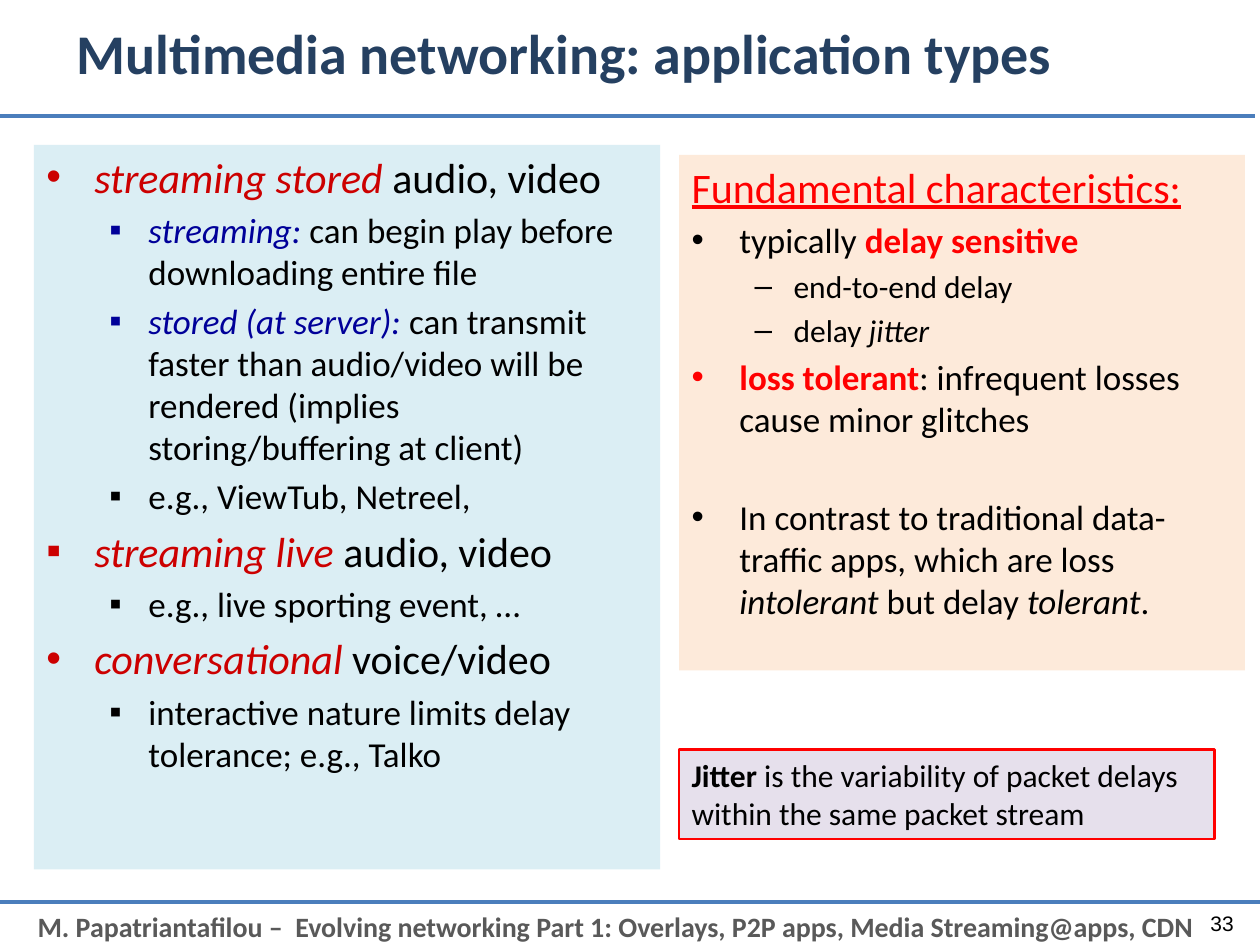
from lxml.etree import SubElement
from pptx import Presentation
from pptx.dml.color import RGBColor
from pptx.enum.shapes import MSO_CONNECTOR, MSO_SHAPE
from pptx.enum.text import MSO_ANCHOR, PP_ALIGN
from pptx.oxml.ns import qn
from pptx.util import Inches, Pt

COLORS = {
    "black": "000000", "navy": "254061", "rule": "4B7EBC", "gray": "595959",
    "crimson": "CC0000", "blue": "000099", "red": "FF0000",
    "aqua": "DBEEF4", "peach": "FDEADA", "lilac": "E6E0EC",
}
COLS, ROWS = 100, 75
INDENTS = [(0.38, -0.38), (0.81, -0.31)]


def color(name):
    return RGBColor.from_string(COLORS[name])


class Deck:
    """Holds the style and the current slide; lengths are grid columns and rows."""

    def __init__(self, font="Calibri"):
        self.font = font
        self.prs = Presentation()
        self.prs.slide_width, self.prs.slide_height = Inches(10), Inches(7.5)
        self.slide = self.prs.slides.add_slide(self.prs.slide_layouts[6])

    def grid(self, *spots):
        """Turn alternating columns and rows into lengths."""
        units = (self.prs.slide_width / COLS, self.prs.slide_height / ROWS)
        return [round(spot * units[i % 2]) for i, spot in enumerate(spots)]

    def rule(self, left, row):
        ends = self.grid(left, row, left + COLS, row)
        line = self.slide.shapes.add_connector(MSO_CONNECTOR.STRAIGHT, *ends)
        line.line.color.rgb = color("rule")
        line.line.width = Pt(2.25)
        SubElement(line._element.spPr, qn("a:effectLst"))

    def text(self, at, words, size, tint="black", bold=False, font=None,
             align=PP_ALIGN.LEFT, anchor=MSO_ANCHOR.TOP):
        frame = self.slide.shapes.add_textbox(*self.grid(*at)).text_frame
        frame.word_wrap = True
        frame.vertical_anchor = anchor
        para = frame.paragraphs[0]
        para.alignment = align
        self.fill(para, [(words, {})], size, tint, font)
        para.font.bold = bold

    def panel(self, at, fill, edge=None):
        """Add a filled box and return its text frame."""
        box = self.slide.shapes.add_shape(MSO_SHAPE.RECTANGLE, *self.grid(*at))
        box.shadow.inherit = False
        box.fill.solid()
        box.fill.fore_color.rgb = color(fill)
        if edge:
            box.line.color.rgb = color(edge)
            box.line.width = Pt(1.5)
        else:
            box.line.fill.background()
        frame = box.text_frame
        frame.word_wrap = True
        frame.vertical_anchor = MSO_ANCHOR.TOP
        return frame

    def fill(self, para, runs, size, tint="black", font=None):
        para.font.name = font or self.font
        para.font.size = Pt(size)
        para.font.color.rgb = color(tint)
        for words, look in runs:
            run = para.add_run()
            run.text = words
            for key, value in look.items():
                if key == "tint":
                    run.font.color.rgb = color(value)
                else:
                    setattr(run.font, key, value)

    def bullet(self, para, mark, level, tint):
        para.level = level
        props = para._p.get_or_add_pPr()
        margin, indent = INDENTS[level]
        props.set("marL", str(Inches(margin)))
        props.set("indent", str(Inches(indent)))
        ink = SubElement(props, qn("a:buClr"))
        SubElement(ink, qn("a:srgbClr"), val=COLORS[tint])
        SubElement(props, qn("a:buFont"), typeface="Arial")
        SubElement(props, qn("a:buChar"), char=mark)

    def items(self, frame, rows):
        """Add rows of (mark, level, size, extra space before, runs)."""
        for i, (mark, level, size, gap, runs) in enumerate(rows):
            para = frame.add_paragraph() if i else frame.paragraphs[0]
            para.alignment = PP_ALIGN.LEFT
            if mark:
                self.bullet(para, mark, level, runs[0][1].get("tint", "black"))
            para.space_before = Pt(0.2 * size + gap)
            self.fill(para, runs, size)


def plain(words):
    return words, {}


def lean(words, tint="black"):
    return words, {"italic": True, "tint": tint}


def strong(words, tint="black"):
    return words, {"bold": True, "tint": tint}


def head(mark, term, rest):
    return mark, 0, 24, 0, [lean(term, "crimson"), plain(rest)]


def sub(*runs):
    return "▪", 1, 20, 0, runs


def dash(*runs):
    return "–", 1, 18, 0, runs


def point(*runs, gap=0):
    return "•", 0, 20, gap, runs


TYPES = [
    head("•", "streaming stored ", "audio, video"),
    sub(lean("streaming: ", "blue"),
        plain("can begin play before downloading entire file")),
    sub(lean("stored (at server): ", "blue"),
        plain("can transmit faster than audio/video will be rendered "
              "(implies storing/buffering at client)")),
    sub(plain("e.g., ViewTub, Netreel,")),
    head("▪", "streaming live ", "audio, video"),
    sub(plain("e.g., live sporting event, …")),
    head("•", "conversational ", "voice/video"),
    sub(plain("interactive nature limits delay tolerance; e.g., Talko")),
]
TRAITS = [
    (None, 0, 24, 0, [("Fundamental characteristics:",
                       {"tint": "red", "underline": True})]),
    point(plain("typically "), strong("delay sensitive", "red")),
    dash(plain("end-to-end delay")),
    dash(plain("delay "), lean("jitter")),
    point(strong("loss tolerant", "red"),
          plain(": infrequent losses cause minor glitches")),
    point(plain("In contrast to traditional data-traffic apps, which are loss "),
          lean("intolerant"), plain(" but delay "), lean("tolerant"), plain("."),
          gap=28),
]


def main():
    deck = Deck()
    deck.rule(0, 71.6)
    deck.text((2, 71.7, 98, 3.7),
              "M. Papatriantafilou –  Evolving networking Part 1: Overlays, "
              "P2P apps, Media Streaming@apps, CDN", 16, "gray", bold=True)
    deck.rule(-0.4, 9.2)
    deck.text((5.1, 0, 89.9, 8.3), "Multimedia networking: application types",
              32, "navy", bold=True, anchor=MSO_ANCHOR.MIDDLE)
    deck.text((90.9, 71.3, 8, 4), "33", 12, font="Arial",
              align=PP_ALIGN.RIGHT, anchor=MSO_ANCHOR.MIDDLE)
    deck.items(deck.panel((2.7, 11.5, 49.7, 57.5), "aqua"), TYPES)
    deck.items(deck.panel((53.9, 12.3, 44.9, 40.9), "peach"), TRAITS)
    note = deck.panel((53.9, 59.5, 42.5, 7.1), "lilac", "red").paragraphs[0]
    note.alignment = PP_ALIGN.LEFT
    deck.fill(note, [strong("Jitter"), plain(" is the variability of packet delays "
                                             "within the same packet stream")], 18)
    deck.prs.save("out.pptx")


if __name__ == "__main__":
    main()
